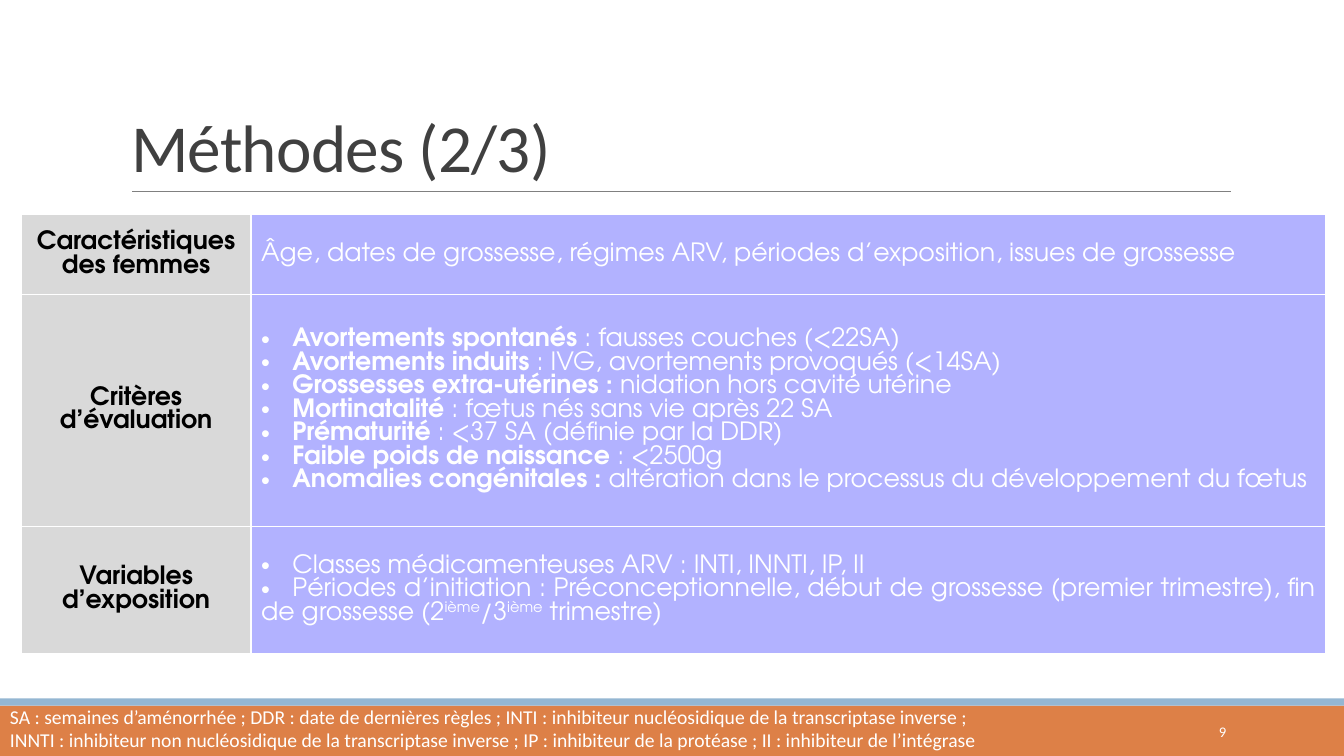
from lxml.etree import SubElement
from pptx import Presentation
from pptx.dml.color import RGBColor
from pptx.enum.shapes import MSO_CONNECTOR, MSO_SHAPE
from pptx.enum.text import MSO_ANCHOR, MSO_AUTO_SIZE, PP_ALIGN
from pptx.oxml.ns import qn
from pptx.util import Inches, Pt

TITLE = "Méthodes (2/3)"
PAGE = "9"
HEADINGS = ["Caractéristiques des femmes", "Critères d’évaluation", "Variables d’exposition"]
CHARACTERISTICS = "Âge, dates de grossesse, régimes ARV, périodes d’exposition, issues de grossesse"
CRITERIA = [  # bold term, definition
    ("Avortements spontanés ", ": fausses couches (<22SA)"),
    ("Avortements induits ", ": IVG, avortements provoqués (<14SA)"),
    ("Grossesses extra-utérines : ", "nidation hors cavité utérine"),
    ("Mortinatalité", " : fœtus nés sans vie après 22 SA"),
    ("Prématurité", " : <37 SA (définie par la DDR)"),
    ("Faible poids de naissance ", ": <2500g"),
    ("Anomalies congénitales : ", "altération dans le processus du développement du fœtus"),
]
EXPOSURES = [  # every second piece is superscript
    ("\tClasses médicamenteuses ARV : INTI, INNTI, IP, II",),
    ("\tPériodes d’initiation : Préconceptionnelle, début de grossesse (premier trimestre), "
     "fin de grossesse (2", "ième", "/3", "ième", " trimestre)"),
]
ABBREVIATIONS = [
    "SA : semaines d’aménorrhée ; DDR : date de dernières règles ; "
    "INTI : inhibiteur nucléosidique de la transcriptase inverse ;",
    "INNTI : inhibiteur non nucléosidique de la transcriptase inverse ; "
    "IP : inhibiteur de la protéase ; II : inhibiteur de l’intégrase",
]
BANDS = [(7, 0.5, "DD8047"), (6.93, 0.07, "94B6D2")]  # top, height, colour
COLUMNS = [2.28, 10.66]
ROWS = [0.79, 2.3, 1.26]
BODY_FONT, TABLE_FONT = "Calibri", "TeX Gyre Adventor"
WHITE, BLACK, GREY, VIOLET = "FFFFFF", "000000", "D9D9D9", "9999FF"
BULLET_INDENT = Inches(0.31)


def rgb(value):
    return RGBColor.from_string(value)


def style(run, size, font, color, bold=False):
    run.font.size = Pt(size)
    run.font.name = font
    run.font.color.rgb = rgb(color)
    run.font.bold = bold


def add_bullet(paragraph, hanging):
    """Bullet with either a hanging indent or a tab stop and no indent."""
    paragraph.alignment = PP_ALIGN.JUSTIFY
    properties = paragraph._p.get_or_add_pPr()
    properties.set("marL", str(BULLET_INDENT if hanging else 0))
    properties.set("indent", str(-BULLET_INDENT if hanging else 0))
    SubElement(properties, qn("a:buFont"), typeface="Arial")
    SubElement(properties, qn("a:buChar"), char="•")
    if not hanging:
        tabs = SubElement(properties, qn("a:tabLst"))
        SubElement(tabs, qn("a:tab"), pos=str(BULLET_INDENT), algn="l")


def add_bullets(cell, items, hanging):
    for index, pieces in enumerate(items):
        frame = cell.text_frame
        paragraph = frame.add_paragraph() if index else frame.paragraphs[0]
        add_bullet(paragraph, hanging)
        for position, piece in enumerate(pieces):
            run = paragraph.add_run()
            run.text = piece
            style(run, 18, TABLE_FONT, WHITE, bold=hanging and position == 0)
            if not hanging and position % 2:
                run.font._element.set("baseline", "30000")


def format_cell(cell, fill, opacity=None):
    cell.vertical_anchor = MSO_ANCHOR.MIDDLE
    properties = cell._tc.get_or_add_tcPr()
    for side in ("a:lnL", "a:lnR", "a:lnT", "a:lnB"):
        border = SubElement(properties, qn(side), w=str(Pt(1)))
        SubElement(SubElement(border, qn("a:solidFill")), qn("a:srgbClr"), val=WHITE)
    cell.fill.solid()
    cell.fill.fore_color.rgb = rgb(fill)
    if opacity:
        color = properties.find(qn("a:solidFill")).find(qn("a:srgbClr"))
        SubElement(color, qn("a:alpha"), val=str(opacity * 1000))


def add_text(slide, left, top, width, height, lines, size):
    frame = slide.shapes.add_textbox(
        Inches(left), Inches(top), Inches(width), Inches(height)).text_frame
    frame.word_wrap = True
    frame.text = "\n".join(lines)
    for paragraph in frame.paragraphs:
        style(paragraph.runs[0], size, BODY_FONT, WHITE)
    return frame


def add_background(slide):
    for top, height, color in BANDS:
        band = slide.shapes.add_shape(
            MSO_SHAPE.RECTANGLE, 0, Inches(top), Inches(13.33), Inches(height))
        band.shadow.inherit = False
        band.fill.solid()
        band.fill.fore_color.rgb = rgb(color)
        band.line.fill.background()
    rule = slide.shapes.add_connector(
        MSO_CONNECTOR.STRAIGHT, Inches(1.31), Inches(1.9), Inches(12.21), Inches(1.9))
    rule.line.color.rgb = rgb("808080")
    rule.line.width = Pt(0.5)
    SubElement(rule._element.spPr, qn("a:effectLst"))


def add_title(slide):
    title = slide.shapes.title
    title.left, title.top = Inches(1.2), Inches(0.31)
    title.width, title.height = Inches(11), Inches(1.59)
    frame = title.text_frame
    frame.text = TITLE
    frame.auto_size = MSO_AUTO_SIZE.NONE
    frame.vertical_anchor = MSO_ANCHOR.BOTTOM
    paragraph = frame.paragraphs[0]
    paragraph.alignment = PP_ALIGN.LEFT
    paragraph.line_spacing = 0.85
    style(paragraph.runs[0], 48, BODY_FONT, "404040")
    paragraph.runs[0].font._element.set("spc", "-50")


def add_methods_table(slide):
    table = slide.shapes.add_table(
        len(ROWS), len(COLUMNS), Inches(0.21), Inches(2.13),
        Inches(sum(COLUMNS)), Inches(sum(ROWS))).table
    for column, width in zip(table.columns, COLUMNS):
        column.width = Inches(width)
    for row, height in zip(table.rows, ROWS):
        row.height = Inches(height)
    for index, heading in enumerate(HEADINGS):
        label, detail = table.cell(index, 0), table.cell(index, 1)
        label.text_frame.text = heading
        paragraph = label.text_frame.paragraphs[0]
        paragraph.alignment = PP_ALIGN.CENTER
        style(paragraph.runs[0], 18, TABLE_FONT, BLACK, bold=True)
        format_cell(label, GREY)
        format_cell(detail, VIOLET, opacity=75)
    characteristics = table.cell(0, 1).text_frame
    characteristics.text = CHARACTERISTICS
    style(characteristics.paragraphs[0].runs[0], 18, TABLE_FONT, WHITE)
    add_bullets(table.cell(1, 1), CRITERIA, hanging=True)
    add_bullets(table.cell(2, 1), EXPOSURES, hanging=False)


def main():
    deck = Presentation()
    deck.slide_width, deck.slide_height = Inches(13.33), Inches(7.5)
    slide = deck.slides.add_slide(deck.slide_layouts[5])
    add_background(slide)
    add_title(slide)
    add_methods_table(slide)
    page = add_text(slide, 10.83, 7.06, 1.43, 0.4, [PAGE], 10.5)
    page.vertical_anchor = MSO_ANCHOR.MIDDLE
    page.paragraphs[0].alignment = PP_ALIGN.RIGHT
    add_text(slide, 0, 6.94, 11.65, 0.57, ABBREVIATIONS, 14)
    deck.save("out.pptx")


if __name__ == "__main__":
    main()
